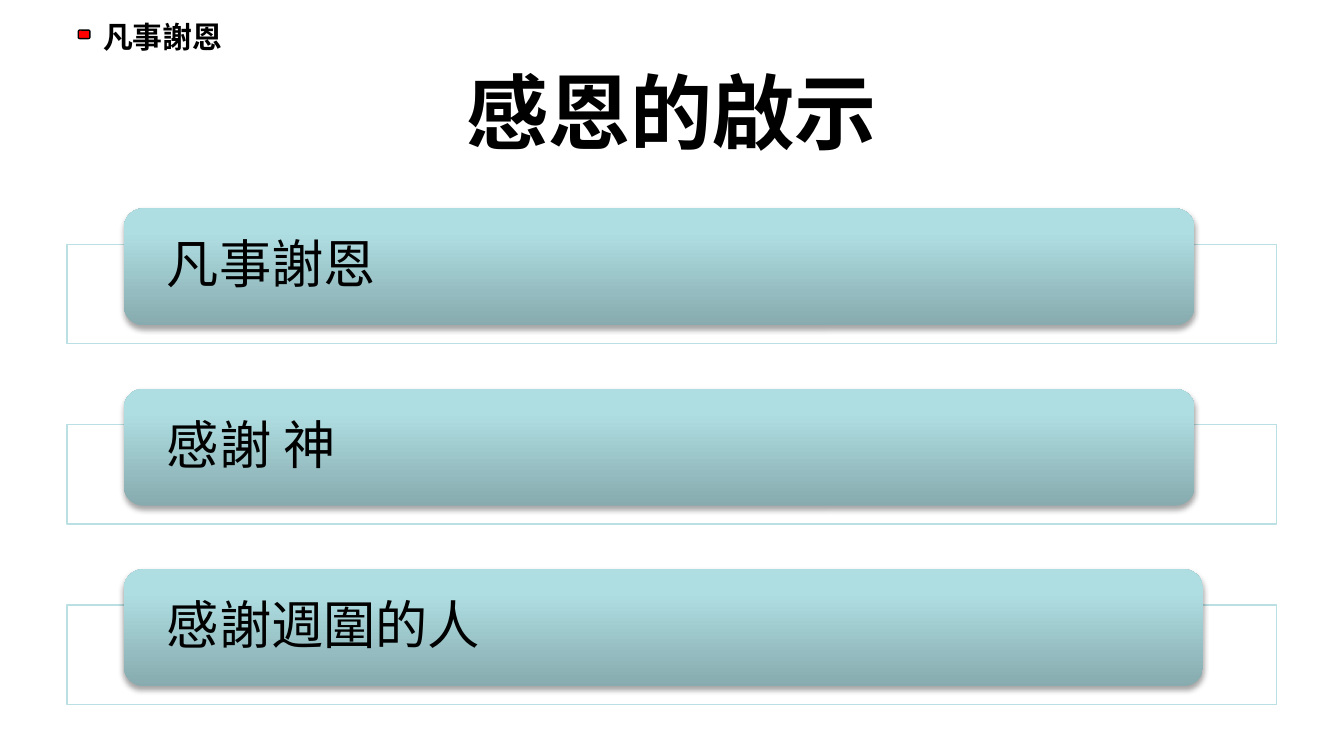
from lxml import etree
from pptx import Presentation
from pptx.dml.color import RGBColor
from pptx.enum.shapes import MSO_SHAPE
from pptx.enum.text import MSO_ANCHOR, PP_ALIGN
from pptx.oxml import parse_xml
from pptx.oxml.ns import nsdecls, qn
from pptx.util import Cm, Pt

BLACK = RGBColor(0x00, 0x00, 0x00)
WHITE = RGBColor(0xFF, 0xFF, 0xFF)
RED = RGBColor(0xFF, 0x00, 0x00)
PALE_TEAL = RGBColor(0xBB, 0xE0, 0xE3)
GRADIENT = [
    (0, RGBColor(0x87, 0xAB, 0xAE)),
    (80, RGBColor(0xAF, 0xDE, 0xE2)),
    (100, RGBColor(0xAF, 0xE0, 0xE4)),
]
FONT = "Roboto"
TOPICS = [("凡事謝恩", 20.24), ("感謝 神", 20.24), ("感謝週圍的人", 20.4)]
ROW_PITCH = 3.41


def write_text(shape, text, size, bold=False, align=PP_ALIGN.LEFT):
    frame = shape.text_frame
    frame.word_wrap = True
    paragraph = frame.paragraphs[0]
    paragraph.text = text
    paragraph.alignment = align
    paragraph.font.name = FONT
    paragraph.font.size = Pt(size)
    paragraph.font.bold = bold
    paragraph.font.color.rgb = BLACK
    return frame


def add_box(shapes, kind, left, top, width, height, fill=None, line=None):
    shape = shapes.add_shape(kind, Cm(left), Cm(top), Cm(width), Cm(height))
    shape.shadow.inherit = False
    if fill is not None:
        shape.fill.solid()
        shape.fill.fore_color.rgb = fill
    if line is None:
        shape.line.fill.background()
    else:
        shape.line.color.rgb = line
        shape.line.width = Pt(0.75)
    return shape


def style_bar(bar):
    """Give the bar a three-stop gradient and a soft shadow below it."""
    stops = "".join(
        f'<a:gs pos="{position * 1000}"><a:srgbClr val="{color}"/></a:gs>'
        for position, color in GRADIENT
    )
    gradient = parse_xml(
        f'<a:gradFill {nsdecls("a")}><a:gsLst>{stops}</a:gsLst>'
        '<a:lin ang="16200000" scaled="0"/></a:gradFill>'
    )
    properties = bar._element.spPr
    properties.find(qn("a:prstGeom")).addnext(gradient)
    shadow = etree.SubElement(
        properties.find(qn("a:effectLst")), qn("a:outerShdw"),
        blurRad=str(Pt(3.1)), dist=str(Pt(1.8)), dir="5400000", rotWithShape="0",
    )
    color = etree.SubElement(shadow, qn("a:srgbClr"), val=str(BLACK))
    etree.SubElement(color, qn("a:alpha"), val="35000")


def add_header(slide, left, top, width, height):
    # Red marker followed by the section name
    marker = add_box(slide.shapes, MSO_SHAPE.ROUNDED_RECTANGLE,
                     left, top + 0.35, 0.22, 0.16, RED, BLACK)
    marker.adjustments[0] = 0.167
    label = slide.shapes.add_textbox(Cm(left + 0.22), Cm(top), Cm(width - 0.22), Cm(height))
    write_text(label, "凡事謝恩", 16, bold=True)


def add_title(slide, left, top, width, height):
    title = slide.shapes.add_textbox(Cm(left), Cm(top), Cm(width), Cm(height))
    frame = write_text(title, "感恩的啟示", 44, bold=True, align=PP_ALIGN.CENTER)
    frame.vertical_anchor = MSO_ANCHOR.MIDDLE


def add_topic(shapes, text, bar_width, left, top, width, height):
    # Outlined frame behind
    frame = add_box(shapes, MSO_SHAPE.RECTANGLE, left, top, width, height, WHITE, PALE_TEAL)
    color = frame.fill._xPr.find(qn("a:solidFill"))[0]
    etree.SubElement(color, qn("a:alpha"), val="90000")

    # Bar overlapping the frame's top edge
    bar = add_box(shapes, MSO_SHAPE.ROUNDED_RECTANGLE, left + 1.07, top - 0.68, bar_width, 2.21)
    style_bar(bar)
    text_frame = write_text(bar, text, 28)
    text_frame.vertical_anchor = MSO_ANCHOR.MIDDLE
    text_frame.margin_left = text_frame.margin_right = Cm(0.71)
    text_frame.margin_top = text_frame.margin_bottom = 0
    text_frame.paragraphs[0].line_spacing = 0.9


def add_topic_list(slide, left, top, width, row_height):
    group = slide.shapes.add_group_shape()
    for row, (text, bar_width) in enumerate(TOPICS):
        add_topic(group.shapes, text, bar_width,
                  left, top + row * ROW_PITCH, width, row_height)


def main():
    presentation = Presentation()
    presentation.slide_width = Cm(25.4)
    presentation.slide_height = Cm(14.29)
    slide = presentation.slides.add_slide(presentation.slide_layouts[6])
    add_header(slide, 1.48, 0.22, 10.58, 0.94)
    add_title(slide, 1.27, 0.9, 22.86, 2.38)
    add_topic_list(slide, 1.27, 4.62, 22.86, 1.88)
    presentation.save("out.pptx")


if __name__ == "__main__":
    main()
